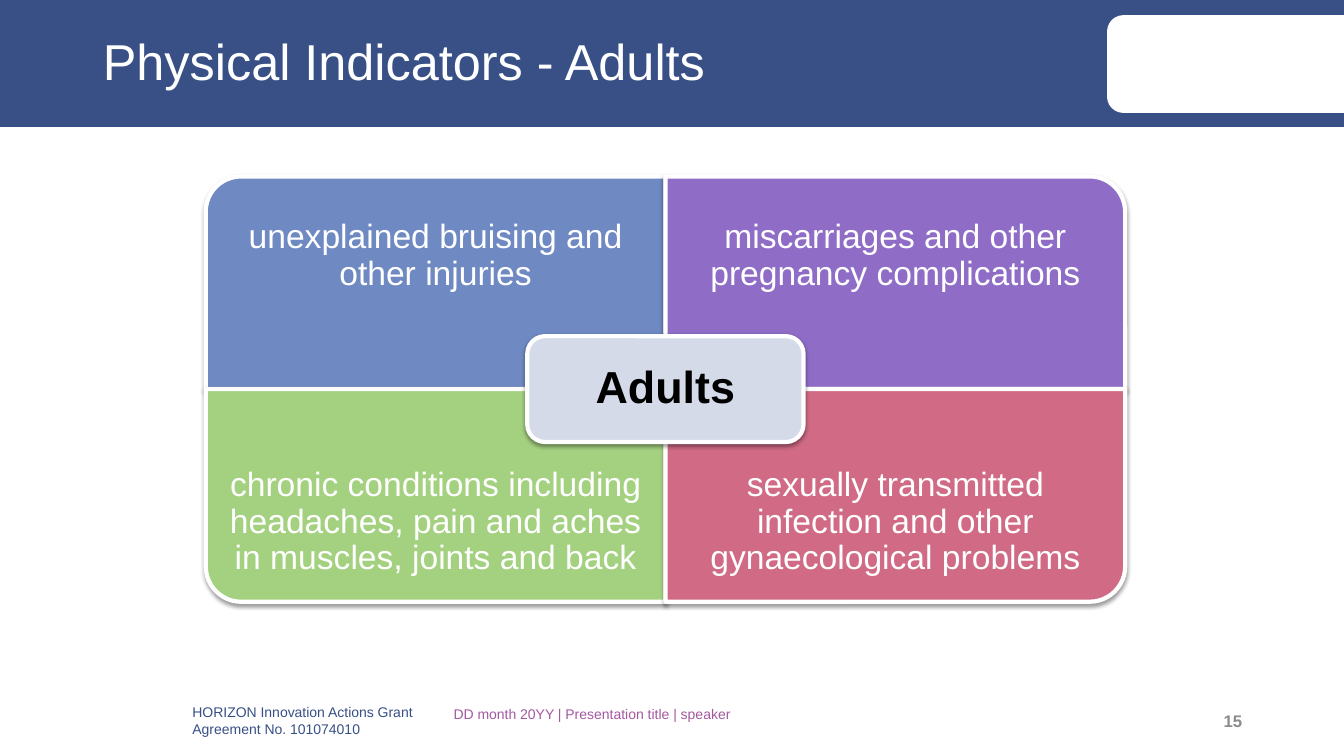
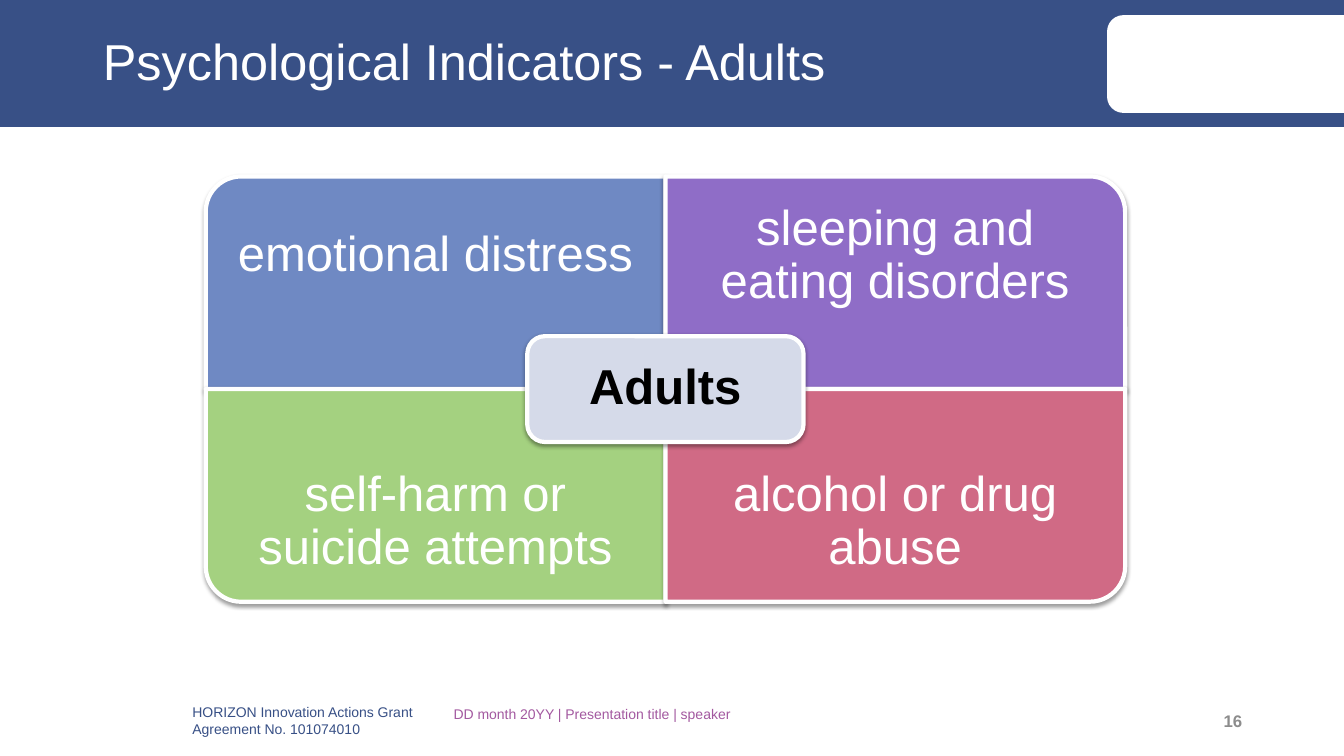
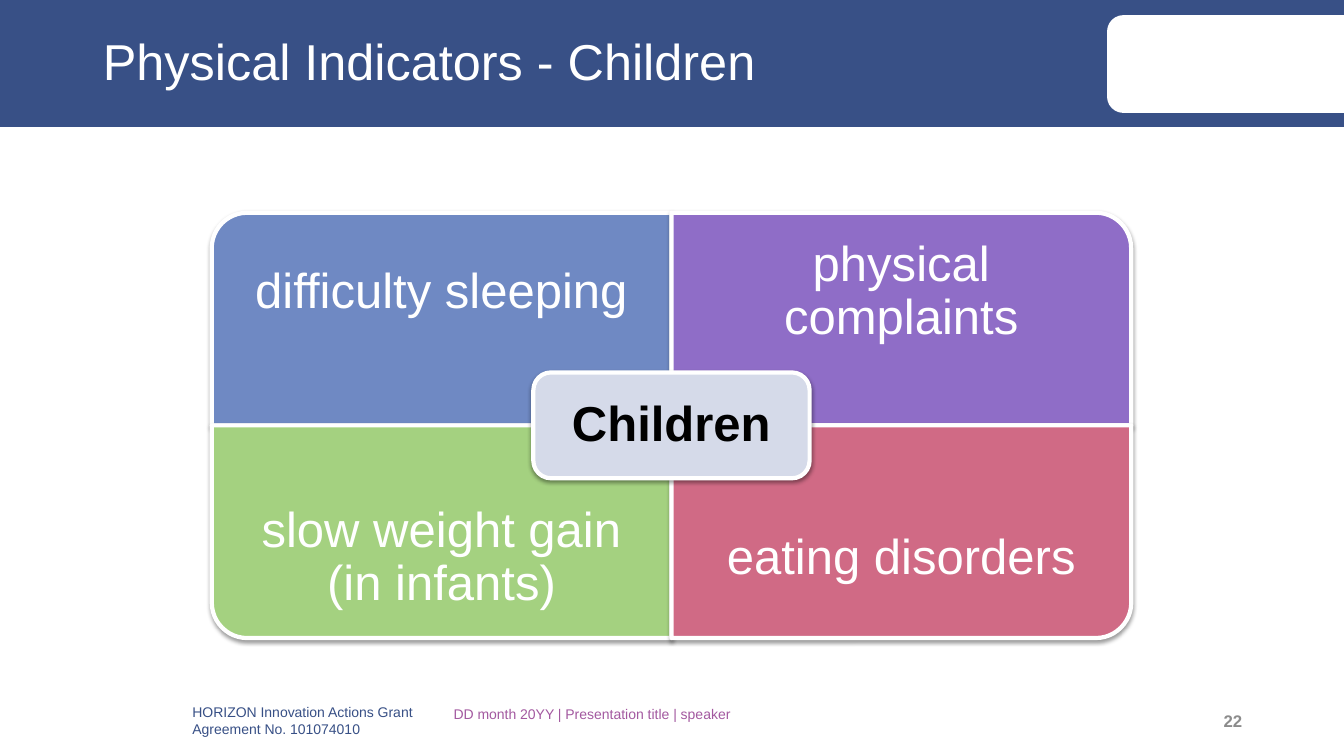
from lxml.etree import SubElement
from pptx import Presentation
from pptx.dml.color import RGBColor
from pptx.enum.shapes import MSO_SHAPE as Preset
from pptx.enum.text import MSO_ANCHOR as Anchor, PP_ALIGN as Align
from pptx.oxml.ns import qn
from pptx.util import Inches, Pt

FONT = "Arial"
WHITE = RGBColor(0xFF, 0xFF, 0xFF)
BLACK = RGBColor(0x00, 0x00, 0x00)
NAVY = RGBColor(0x38, 0x50, 0x86)
PLUM = RGBColor(0xA3, 0x59, 0xA0)
GREY = RGBColor(0x8C, 0x8C, 0x8C)
PALE_BLUE = RGBColor(0xD5, 0xDA, 0xE9)
BLUE = RGBColor(0x6F, 0x89, 0xC3)
PURPLE = RGBColor(0x8F, 0x6D, 0xC7)
GREEN = RGBColor(0xA4, 0xD1, 0x80)
ROSE = RGBColor(0xD0, 0x6A, 0x85)

QUADRANTS = [(BLUE, 270), (PURPLE, 0), (GREEN, 180), (ROSE, 90)]
PANEL_WIDTH, PANEL_HEIGHT, LABEL_HEIGHT = 4.56, 2.11, 1.58
HUB_WIDTH, HUB_HEIGHT = 2.74, 1.05

SLIDES = [
    ("Physical Indicators - Adults", "15", (2.04, 1.75), "Adults", 32, 24, [
        "unexplained bruising and other injuries",
        "miscarriages and other pregnancy complications",
        "chronic conditions including headaches, pain and aches in muscles, joints and back",
        "sexually transmitted infection and other gynaecological problems",
    ]),
    ("Psychological Indicators - Adults", "16", (2.04, 1.75), "Adults", 35, 35, [
        "emotional distress",
        "sleeping and eating disorders",
        "self-harm or suicide attempts",
        "alcohol or drug abuse",
    ]),
    ("Physical Indicators - Children", "22", (2.1, 2.11), "Children", 35, 35, [
        "difficulty sleeping",
        "physical complaints",
        "slow weight gain (in infants)",
        "eating disorders",
    ]),
]


def write(shape, text, size, color, align=Align.LEFT, anchor=Anchor.MIDDLE,
          bold=False, spacing=1.0, inset=None):
    frame = shape.text_frame
    frame.text = text
    frame.word_wrap = True
    frame.vertical_anchor = anchor
    if inset is not None:
        frame.margin_left = frame.margin_right = Inches(inset)
        frame.margin_top = frame.margin_bottom = Inches(inset)
    para = frame.paragraphs[0]
    para.alignment = align
    para.line_spacing = spacing
    font = para.runs[0].font
    font.name, font.size, font.bold = FONT, Pt(size), bold
    font.color.rgb = color


def add_text(page, area, text, size, color, **style):
    box = page.shapes.add_textbox(*map(Inches, area))
    write(box, text, size, color, **style)
    return box


def add_block(page, preset, area, fill, rotation=0):
    left, top, width, height = area
    if rotation % 180:
        left, top = left + (width - height) / 2, top + (height - width) / 2
        width, height = height, width
    block = page.shapes.add_shape(preset, *map(Inches, (left, top, width, height)))
    block.rotation = rotation
    block.shadow.inherit = False
    block.fill.solid()
    block.fill.fore_color.rgb = fill
    block.line.fill.background()
    return block


def add_card(page, preset, area, fill, rotation=0):
    card = add_block(page, preset, area, fill, rotation)
    card.line.color.rgb = WHITE
    card.line.width = Pt(3)
    effects = card.element.spPr.find(qn("a:effectLst"))
    shadow = SubElement(effects, qn("a:outerShdw"), blurRad=str(Pt(3.1)),
                        dist=str(Pt(1.6)), dir="5400000", rotWithShape="0")
    color = SubElement(shadow, qn("a:srgbClr"), val=str(BLACK))
    SubElement(color, qn("a:alpha"), val="38000")
    return card


def move_frame_to_layout(page, layout):
    frame = [
        add_block(page, Preset.RECTANGLE, (0, 0, 13.33, 1.26), NAVY),
        add_block(page, Preset.ROUND_2_SAME_RECTANGLE, (10.98, 0.15, 2.35, 0.97), WHITE, 270),
        add_text(page, (1.81, 6.95, 2.59, 0.4),
                 "HORIZON Innovation Actions Grant Agreement No. 101074010", 10, NAVY),
    ]
    for shape in frame:
        layout.shapes.element.append(shape.element)


def set_title(page, text):
    title = page.shapes.title
    title.left, title.top, title.width, title.height = map(Inches, (0.92, 0.15, 10, 0.97))
    write(title, text, 36, WHITE, spacing=0.9)


def add_footer(page, number):
    add_text(page, (9.42, 6.95, 3, 0.4), number, 12, GREY, align=Align.RIGHT, bold=True)
    add_text(page, (4.4, 6.95, 7.24, 0.4), "DD month 20YY | Presentation title | speaker",
             10, PLUM, anchor=Anchor.TOP)


def add_matrix(page, origin, hub_text, hub_size, label_size, labels):
    left, top = origin
    for index, (label, (fill, rotation)) in enumerate(zip(labels, QUADRANTS)):
        row, column = divmod(index, 2)
        x, y = left + column * PANEL_WIDTH, top + row * PANEL_HEIGHT
        add_card(page, Preset.ROUND_1_RECTANGLE, (x, y, PANEL_WIDTH, PANEL_HEIGHT), fill, rotation)
        label_top = y + row * (PANEL_HEIGHT - LABEL_HEIGHT)
        add_text(page, (x, label_top, PANEL_WIDTH, LABEL_HEIGHT), label, label_size, WHITE,
                 align=Align.CENTER, spacing=0.9, inset=label_size / 128)
    hub_area = (left + PANEL_WIDTH - HUB_WIDTH / 2, top + PANEL_HEIGHT - HUB_HEIGHT / 2,
                HUB_WIDTH, HUB_HEIGHT)
    hub = add_card(page, Preset.ROUNDED_RECTANGLE, hub_area, PALE_BLUE)
    write(hub, hub_text, hub_size, BLACK, align=Align.CENTER, bold=True,
          spacing=0.9, inset=hub_size / 240)


def main():
    deck = Presentation()
    deck.slide_width, deck.slide_height = Inches(13.33), Inches(7.5)
    layout = deck.slide_layouts.get_by_name("Title Only")
    for index, (title, number, *matrix) in enumerate(SLIDES):
        page = deck.slides.add_slide(layout)
        if index == 0:
            move_frame_to_layout(page, layout)
        set_title(page, title)
        add_matrix(page, *matrix)
        add_footer(page, number)
    deck.save("out.pptx")


if __name__ == "__main__":
    main()
